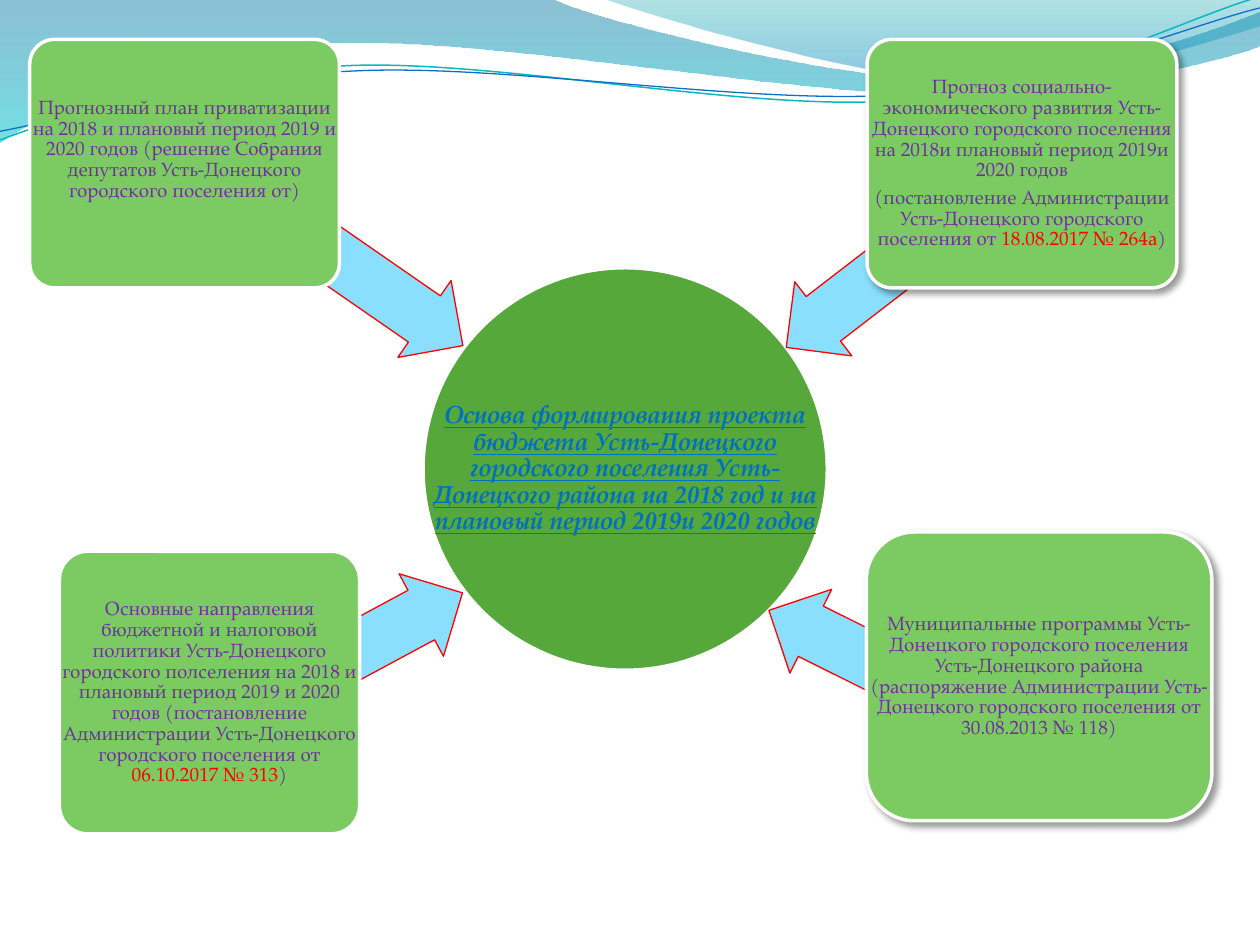
from dataclasses import dataclass

from pptx import Presentation
from pptx import util as u
from pptx.dml.color import RGBColor
from pptx.enum import shapes, text
from pptx.oxml import parse_xml
from pptx.oxml.ns import nsdecls, qn

FONT = "TeX Gyre Pagella"
KIND = shapes.MSO_SHAPE
GREEN, WHITE, RED, VIOLET = "7CCA62", "FFFFFF", "FF0000", "7030A0"


@dataclass
class Wave:
    start: tuple
    legs: list  # two numbers: straight leg; six numbers: cubic curve
    stops: tuple = ()  # (position, colour, opacity in percent)
    line: str = ""
    width: float = 0


@dataclass
class Arrow:
    box: tuple
    turn: float


@dataclass
class Card:
    box: tuple
    paras: list  # text between bars is red
    kind: KIND = KIND.ROUNDED_RECTANGLE
    shade: bool = False
    foot: float = 1.5


WAVES = [
    Wave((0, 0), [(316.5, -0.5), (342.5, 12, 478, 45.5, 546, 45.5),
                  (614, 45.5, 690, 18.5, 720, 6.5), (720.5, 26),
                  (708, 31.5, 626.5, 54.5, 537, 54),
                  (448, 54, 275, 20, 185, 24.5), (93, 26, 33, 60, -0.5, 81.5)],
         stops=((0, "0074A1", 45), (1, "00C6CF", 55))),
    Wave((345, -0.5), [(366.5, 8, 491, 44.5, 553.5, 47),
                       (616.5, 49.5, 692, 23, 720, 15), (720, 0)],
         stops=((0, "00A1A9", 30), (0.8, "008BBF", 45))),
    Wave((0, 80), [(34.5, 67, 114, 41, 199.5, 37.5),
                   (284.5, 34, 427, 64, 513.5, 57.5),
                   (600, 51, 675.5, 11, 718.5, -1.5)],
         line="0AB8BF", width=0.85),
    Wave((0, 75), [(34, 69, 118, 44, 204, 40.5),
                   (290, 36.5, 430, 60.5, 516, 54),
                   (602, 48, 677.5, 15, 720, 4.5)],
         line="0F6FC6", width=0.75),
]

ARROWS = [
    Arrow((100.5, 119.5, 180, 53.5), 214.7),
    Arrow((127.5, 346.5, 145.5, 53.5), 151.7),
    Arrow((432.5, 122.5, 161.5, 53.5), 322.4),
    Arrow((432, 353.5, 141, 53.5), 26.5),
]

CARDS = [
    Card((17, 22.5, 177, 142),
         ["Прогнозный план приватизации на 2018 и плановый период 2019 и 2020 "
          "годов (решение Собрания депутатов Усть-Донецкого городского "
          "поселения от)"], foot=17.5),
    Card((34, 315, 171.5, 161.5),
         ["Основные направления бюджетной и налоговой политики "
          "Усть-Донецкого городского полселения на 2018 и плановый период "
          "2019 и 2020 годов (постановление Администрации Усть-Донецкого "
          "городского поселения от |06.10.2017 № 313|)"]),
    Card((495.5, 22.5, 177, 142),
         ["Прогноз социально-экономического развития Усть-Донецкого "
          "городского поселения на 2018и плановый период 2019и 2020 годов",
          "(постановление Администрации Усть-Донецкого городского поселения "
          "от |18.08.2017 № 264а|)"], shade=True),
    Card((495, 304, 197.5, 165),
         ["Муниципальные программы Усть-Донецкого городского поселения "
          "Усть-Донецкого района (распоряжение Администрации Усть-Донецкого "
          "городского поселения от 30.08.2013 № 118)"],
         kind=KIND.FLOWCHART_ALTERNATE_PROCESS, shade=True),
]

HUB = (241.75, 153, 231, 230)
THEME = ("Основа формирования проекта бюджета Усть-Донецкого городского "
         "поселения Усть-Донецкого района на 2018 год и на плановый период "
         "2019и 2020 годов")


def tint(part, code: str) -> None:
    """Set a solid fill or a font colour."""
    if hasattr(part, "solid"):
        part.solid()
        part.fore_color.rgb = RGBColor.from_string(code)
    else:
        part.color.rgb = RGBColor.from_string(code)


def bend(shape, legs: list) -> None:
    """Join the three points of each curved leg into one cubic curve."""
    lines = iter(list(shape._element.spPr.iter(qn("a:lnTo"))))
    for leg in legs:
        trio = [next(lines) for _ in range(len(leg) // 2)]
        if len(trio) == 1:
            continue
        curve = parse_xml(f'<a:cubicBezTo {nsdecls("a")}/>')
        trio[0].addprevious(curve)
        for line in trio:
            curve.append(line[0])
            line.getparent().remove(line)


def add_wave(slide, wave: Wave) -> None:
    spots = [(u.Pt(leg[i]), u.Pt(leg[i + 1]))
             for leg in wave.legs for i in range(0, len(leg), 2)]
    pen = slide.shapes.build_freeform(*map(u.Pt, wave.start), scale=1.0)
    pen.add_line_segments(spots, close=bool(wave.stops))
    shape = pen.convert_to_shape()
    bend(shape, wave.legs)
    shape.shadow.inherit = False
    if not wave.stops:
        shape.fill.background()
        tint(shape.line.fill, wave.line)
        shape.line.width = u.Pt(wave.width)
        return
    shape.line.fill.background()
    shape.fill.gradient()
    shape.fill.gradient_angle = 270
    for stop, (place, code, _) in zip(shape.fill.gradient_stops, wave.stops):
        stop.position = place
        tint(stop, code)
    marks = shape._element.spPr.iter(qn("a:srgbClr"))
    for mark, (_, _, share) in zip(marks, wave.stops):
        mark.append(parse_xml(
            f'<a:alpha {nsdecls("a")} val="{share * 1000}"/>'))


def add_shape(slide, kind: KIND, box: tuple, fill: str,
              line: str = WHITE, width: float = 2):
    shape = slide.shapes.add_shape(kind, *map(u.Pt, box))
    shape.shadow.inherit = False
    tint(shape.fill, fill)
    tint(shape.line.fill, line)
    shape.line.width = u.Pt(width)
    return shape


def add_shade(shape) -> None:
    glow = shape._element.spPr.find(qn("a:effectLst"))
    glow.append(parse_xml(
        f'<a:outerShdw {nsdecls("a")} blurRad="{u.Pt(4)}" dist="{u.Pt(3)}" '
        'dir="2700000" algn="tl" rotWithShape="0"><a:srgbClr val="000000">'
        '<a:alpha val="40000"/></a:srgbClr></a:outerShdw>'))


def add_text(slide, box: tuple, paras: list, size: float, color: str,
             pad: float, foot: float, strong: bool = False) -> None:
    frame = slide.shapes.add_textbox(*map(u.Pt, box)).text_frame
    frame.word_wrap = True
    frame.vertical_anchor = text.MSO_ANCHOR.MIDDLE
    frame.margin_left = frame.margin_right = frame.margin_top = u.Pt(pad)
    frame.margin_bottom = u.Pt(foot)
    for i, words in enumerate(paras):
        para = frame.add_paragraph() if i else frame.paragraphs[0]
        para.alignment = text.PP_ALIGN.CENTER
        para.line_spacing = 0.9
        para.space_after = u.Pt(0.35 * size)
        for j, bit in enumerate(words.split("|")):
            run = para.add_run()
            run.text = bit
            run.font.name, run.font.size = FONT, u.Pt(size)
            tint(run.font, RED if j % 2 else color)
            if strong:
                run.font.bold = run.font.italic = run.font.underline = True


def main() -> None:
    deck = Presentation()
    deck.slide_width, deck.slide_height = u.Pt(720), u.Pt(540)
    slide = deck.slides.add_slide(deck.slide_layouts[6])

    # Waves along the top
    for wave in WAVES:
        add_wave(slide, wave)

    # Central circle
    add_shape(slide, KIND.OVAL, HUB, "55A839")
    add_text(slide, HUB, [THEME], 14, "0070C0", 0.75, 0.75, strong=True)

    # Each arrow lies under its card
    for arrow, card in zip(ARROWS, CARDS):
        shape = add_shape(slide, KIND.LEFT_ARROW, arrow.box, "8ADFFF", RED, 0.75)
        shape.adjustments[0], shape.adjustments[1] = 0.6, 0.5
        shape.rotation = arrow.turn

        shape = add_shape(slide, card.kind, card.box, GREEN)
        if card.kind == KIND.ROUNDED_RECTANGLE:
            shape.adjustments[0] = 0.1
        if card.shade:
            add_shade(shape)
        add_text(slide, card.box, card.paras, 11, VIOLET, 1.5, card.foot)

    deck.save("out.pptx")


if __name__ == "__main__":
    main()
